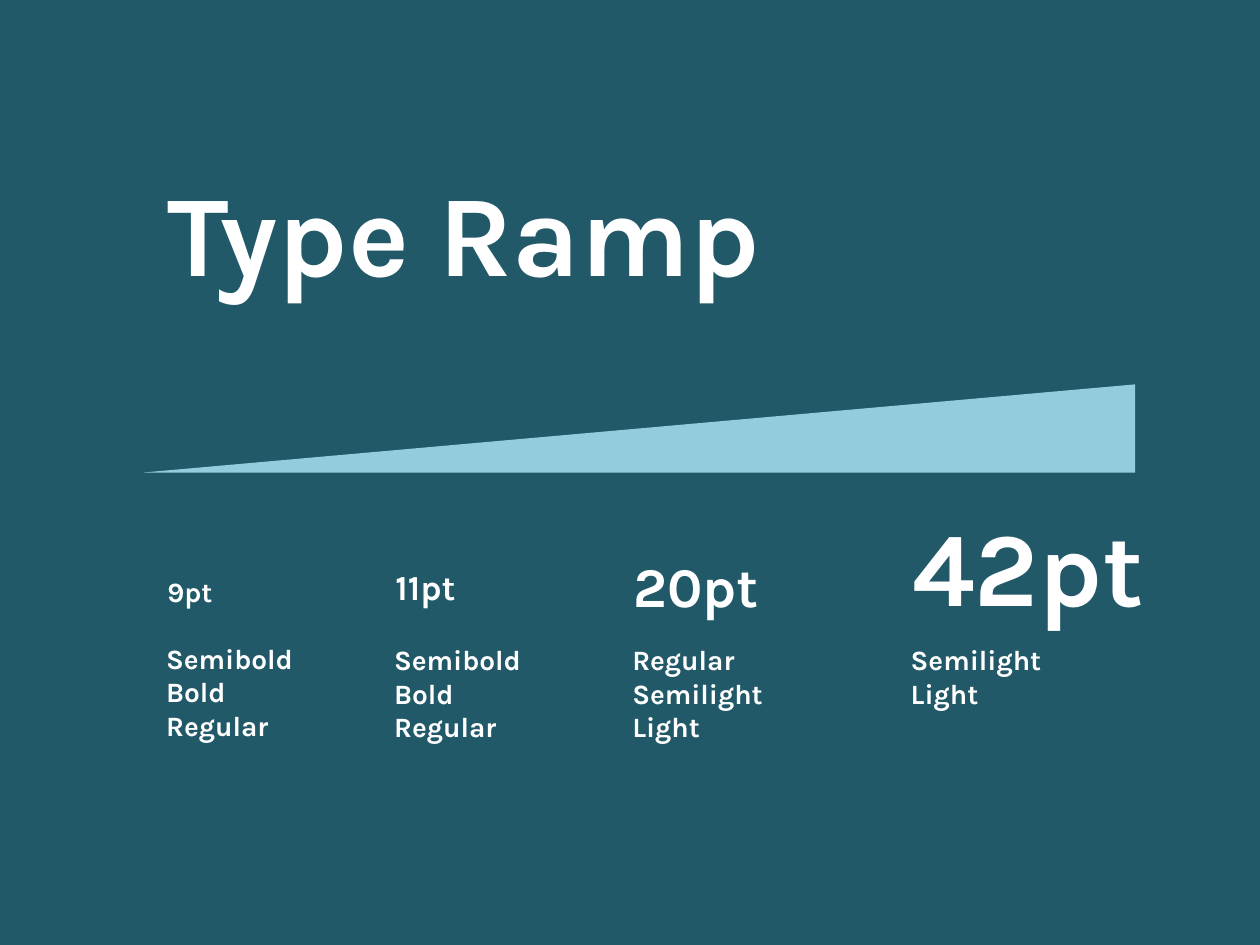
from pptx import Presentation
from pptx.dml.color import RGBColor
from pptx.enum.shapes import MSO_SHAPE
from pptx.enum.text import MSO_ANCHOR, MSO_AUTO_SIZE, PP_ALIGN
from pptx.util import Inches, Pt

TEAL = RGBColor(0x21, 0x59, 0x68)
SKY = RGBColor(0x93, 0xCD, 0xDD)
WHITE = RGBColor(0xFF, 0xFF, 0xFF)


class RampSlide:
    font = {"name": "Karla", "bold": True}
    frame_format = {
        "word_wrap": True,
        "auto_size": MSO_AUTO_SIZE.SHAPE_TO_FIT_TEXT,
        "vertical_anchor": MSO_ANCHOR.TOP,
    }

    def __init__(self, deck):
        self.deck = deck
        self.page = deck.slides.add_slide(deck.slide_layouts[5])

    def place(self, left, top, width, height):
        across, down = self.deck.slide_width, self.deck.slide_height
        return [
            round(share * length / 100)
            for share, length in zip((left, top, width, height), (across, down) * 2)
        ]

    def shape(self, kind, area, color):
        shape = self.page.shapes.add_shape(kind, *self.place(*area))
        shape.shadow.inherit = False
        shape.fill.solid()
        shape.fill.fore_color.rgb = color
        shape.line.fill.background()
        return shape

    def backdrop(self, color):
        shape = self.shape(MSO_SHAPE.RECTANGLE, (0, 0, 100, 100), color)
        self.page.shapes.element.insert(2, shape.element)

    def wedge(self, area, color):
        shape = self.shape(MSO_SHAPE.RIGHT_TRIANGLE, area, color)
        shape.element.spPr.xfrm.set("flipH", "1")

    def fill_text(self, box, lines, size):
        frame = box.text_frame
        for key, value in self.frame_format.items():
            setattr(frame, key, value)
        frame.text = "\n".join(lines)
        for para in frame.paragraphs:
            para.alignment = PP_ALIGN.LEFT
            for span in para.runs:
                for key, value in {**self.font, "size": Pt(size)}.items():
                    setattr(span.font, key, value)
                span.font.color.rgb = WHITE

    def title(self, text, area, size):
        box = self.page.shapes.title
        box.left, box.top, box.width, box.height = self.place(*area)
        self.fill_text(box, [text], size)

    def text(self, lines, area, size):
        box = self.page.shapes.add_textbox(*self.place(*area))
        self.fill_text(box, lines, size)


def main():
    deck = Presentation()
    deck.slide_width, deck.slide_height = Inches(10), Inches(7.5)
    ramp = RampSlide(deck)
    ramp.backdrop(TEAL)
    ramp.title("Type Ramp", (12.3, 16.4, 60.5, 16.13), 66)
    ramp.wedge((11.4, 40.67, 78.7, 9.33), SKY)

    steps = [
        ("9pt", 16, (12.3, 60.13, 7, 4.93), 67.2, ["Semibold", "Bold", "Regular"]),
        ("11pt", 20, (30.4, 59.2, 7, 5.87), 67.33, ["Semibold", "Bold", "Regular"]),
        ("20pt", 32, (49.3, 57.73, 13.3, 8.53), 67.33, ["Regular", "Semilight", "Light"]),
        ("42pt", 60, (71.4, 52.4, 27.4, 14.8), 67.33, ["Semilight", "Light"]),
    ]
    for label, size, area, top, weights in steps:
        ramp.text([label], area, size)
        height = 1.33 + 3.6 * len(weights)
        ramp.text(weights, (area[0] - 0.1, top, 15, height), 16)

    deck.save("out.pptx")


if __name__ == "__main__":
    main()
